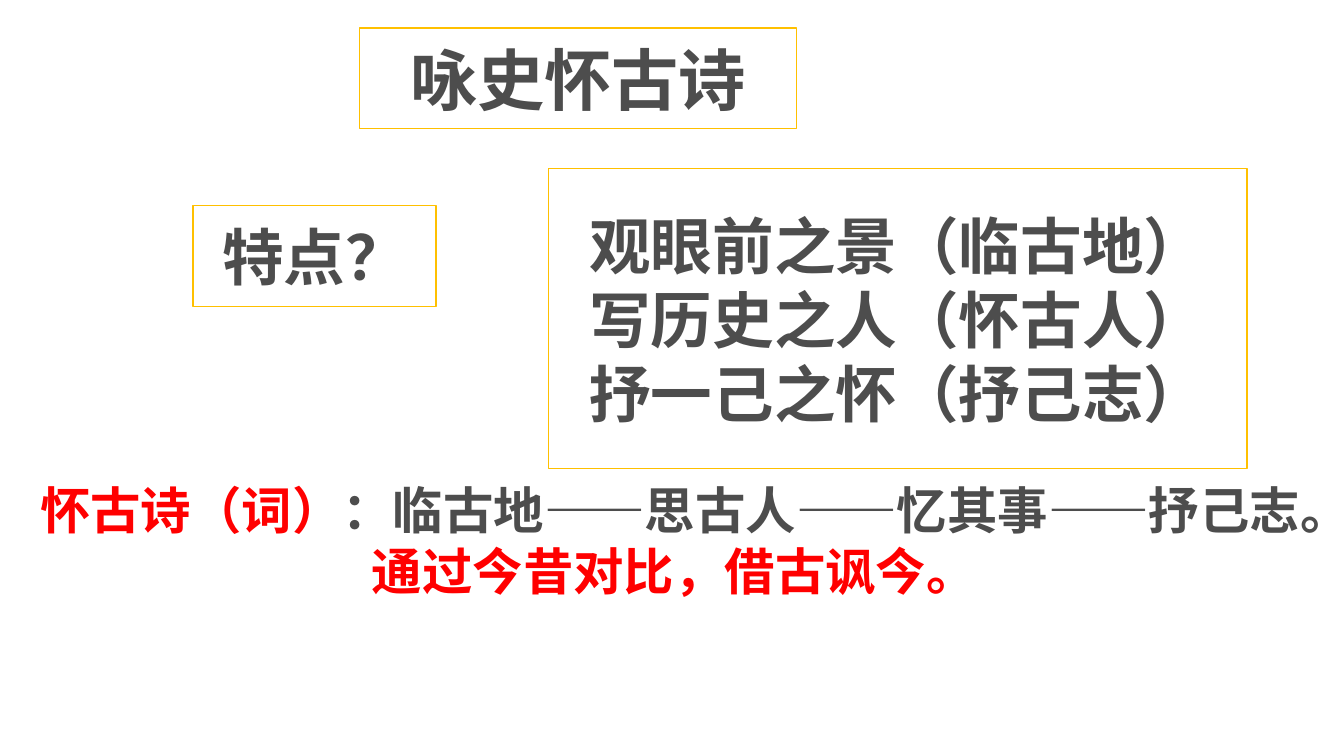
import pptx
import pptx.util
import pptx.dml.color
import pptx.enum.text
import pptx.enum.shapes
import pptx.enum.lang

Pt = pptx.util.Pt
ALIGN = pptx.enum.text.PP_ALIGN
ANCHOR = pptx.enum.text.MSO_ANCHOR
COLORS = {"paper": "FFFFFF", "frame": "FFC000", "ink": "4D4D4D", "accent": "FF0000"}


def rgb(name):
    return pptx.dml.color.RGBColor.from_string(COLORS[name])


def place(sp, box):
    for name, value in zip(("left", "top", "width", "height"), box):
        setattr(sp, name, Pt(value))


def add_run(p, text, color, size, font):
    r = p.add_run()
    r.text = text
    fmt = {
        "size": Pt(size),
        "name": font,
        "bold": True,
        "language_id": pptx.enum.lang.MSO_LANGUAGE_ID.SIMPLIFIED_CHINESE,
    }
    for name, value in fmt.items():
        setattr(r.font, name, value)
    r.font.color.rgb = rgb(color)


def set_frame(tf, anchor):
    fmt = {
        "word_wrap": True,
        "auto_size": pptx.enum.text.MSO_AUTO_SIZE.NONE,
        "vertical_anchor": anchor,
    }
    for name, value in fmt.items():
        setattr(tf, name, value)


def add_paragraph(tf, i, align, left=0):
    p = tf.paragraphs[0] if i == 0 else tf.add_paragraph()
    pPr = p._p.get_or_add_pPr()
    pPr.set("marL", str(Pt(left)))
    pPr.set("indent", "0")
    pPr.append(pptx.oxml.parse_xml(
        '<a:buNone xmlns:a="http://schemas.openxmlformats.org/drawingml/2006/main"/>'))
    for name, value in {"alignment": align, "space_before": Pt(0)}.items():
        setattr(p, name, value)
    return p


def framed_lines(sp, box, lines, size, font):
    place(sp, box)
    sp.fill.solid()
    sp.fill.fore_color.rgb = rgb("paper")
    sp.line.color.rgb = rgb("frame")
    sp.line.width = Pt(1)
    tf = sp.text_frame
    set_frame(tf, ANCHOR.MIDDLE)
    for i, line in enumerate(lines):
        add_run(add_paragraph(tf, i, ALIGN.CENTER), line, "ink", size, font)


def question(s, box):
    sp = s.shapes.add_shape(pptx.enum.shapes.MSO_SHAPE.RECTANGLE, *map(Pt, box))
    sp.shadow.inherit = False
    framed_lines(sp, box, ["特点？"], 44, "Calibri")


def summary(s, box):
    tf = s.shapes.add_textbox(*map(Pt, box)).text_frame
    set_frame(tf, ANCHOR.TOP)
    paragraphs = [
        (0, [("怀古诗（词）", "accent"), ("：临古地——思古人——忆其事——抒己志。", "ink")]),
        (237, [("通过今昔对比，借古讽今。", "accent")]),
    ]
    for i, (left, runs) in enumerate(paragraphs):
        p = add_paragraph(tf, i, ALIGN.LEFT, left)
        for text, color in runs:
            add_run(p, text, color, 36, "Arial")


def poem_slide(prs):
    s = prs.slides.add_slide(prs.slide_layouts[1])
    framed_lines(s.shapes.title, (257, 20, 312, 72), ["咏史怀古诗"], 48, "Calibri")
    question(s, (138, 147, 173.5, 72))
    features = ["观眼前之景（临古地）", "写历史之人（怀古人）", "抒一己之怀（抒己志）"]
    framed_lines(s.placeholders[1], (391.7, 120.2, 499, 214.6), features, 44, "Times New Roman")
    summary(s, (21.6, 339, 928.8, 137))


def main():
    prs = pptx.Presentation()
    prs.slide_width, prs.slide_height = Pt(960), Pt(540)
    poem_slide(prs)
    prs.save("out.pptx")


if __name__ == "__main__":
    main()
